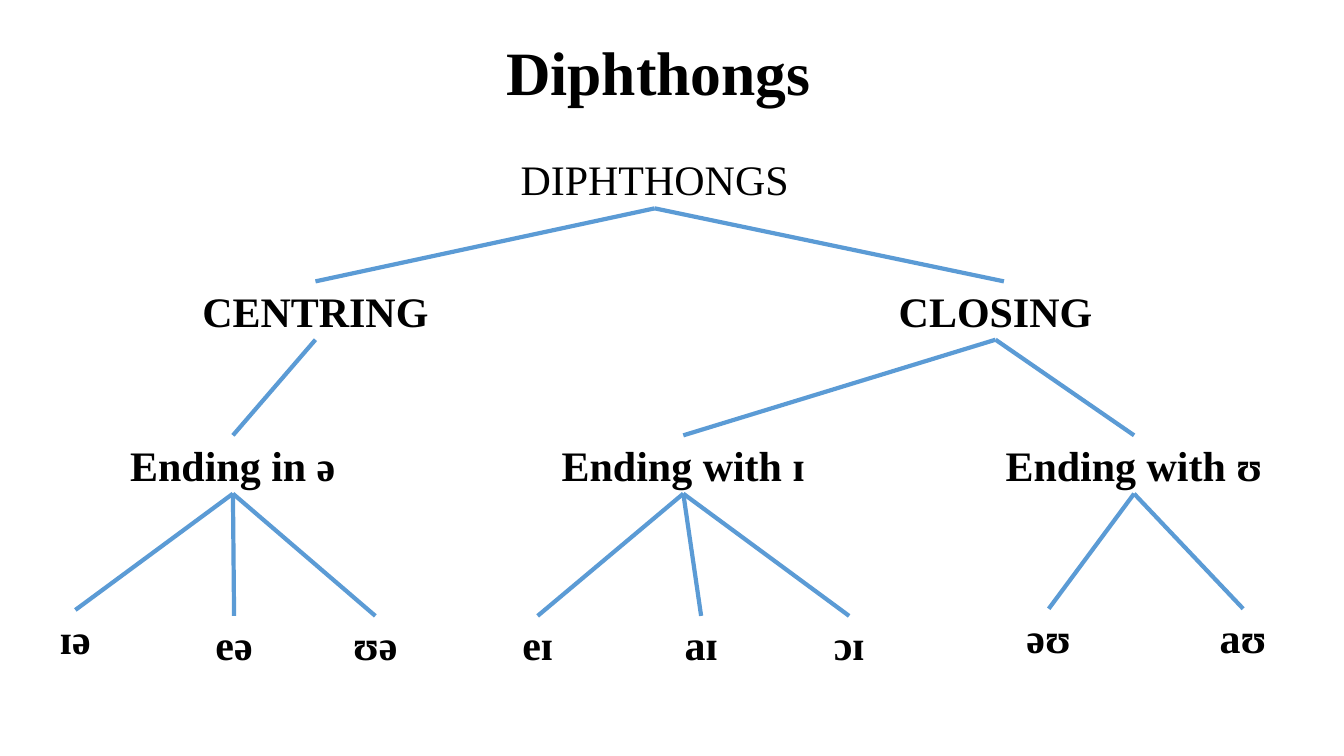
from lxml import etree
from pptx import Presentation
from pptx.dml.color import RGBColor
from pptx.enum.shapes import MSO_CONNECTOR
from pptx.enum.text import MSO_ANCHOR, PP_ALIGN
from pptx.oxml.ns import qn
from pptx.util import Cm, Pt

BLACK = RGBColor(0x00, 0x00, 0x00)
BLUE = RGBColor(0x5B, 0x9B, 0xD5)
STRAIGHT = MSO_CONNECTOR.STRAIGHT
MIDDLE = MSO_ANCHOR.MIDDLE
CENTER = PP_ALIGN.CENTER
TOP, BOTTOM = 0, 2

GROUP_TOP, ENDING_TOP = 7.09, 10.97
GROUP_SIZE = (7.77, 1.47)
SOUND_SIZE = (2.26, 1.4)

GROUPS = [
    ("CENTRING", 7.95, 7.95, [
        ("Ending in ə", 5.87, [
            ("ɪə", 1.9, 15.37), ("eə", 5.9, 15.52), ("ʊə", 9.46, 15.52)]),
    ]),
    ("CLOSING", 25.09, 25.3, [
        ("Ending with ɪ", 17.22, [
            ("eɪ", 13.55, 15.52), ("aɪ", 17.67, 15.52), ("ɔɪ", 21.4, 15.52)]),
        ("Ending with ʊ", 28.58, [
            ("əʊ", 26.43, 15.34), ("aʊ", 31.33, 15.34)]),
    ]),
]


class TreeSlide:
    font_name = "Times New Roman"
    line_width = Pt(3)

    def __init__(self, page):
        self.page = page

    def label(self, text, center, top, size, points=30, bold=True, spacing=1.0):
        width, height = size
        box = self.page.shapes.add_textbox(
            Cm(center - width / 2), Cm(top), Cm(width), Cm(height))
        frame = box.text_frame
        frame.word_wrap = True
        frame.vertical_anchor = MIDDLE
        para = frame.paragraphs[0]
        para.alignment = CENTER
        para.line_spacing = spacing
        span = para.add_run()
        span.text = text
        style = {"name": self.font_name, "size": Pt(points), "bold": bold}
        for name, value in style.items():
            setattr(span.font, name, value)
        span.font.color.rgb = BLACK
        return box

    def branch(self, parent, child, end_x=None):
        end = child.left + child.width // 2 if end_x is None else Cm(end_x)
        line = self.page.shapes.add_connector(
            STRAIGHT, parent.left + parent.width // 2,
            parent.top + parent.height, end, child.top)
        line.begin_connect(parent, BOTTOM)
        if end_x is None:
            line.end_connect(child, TOP)
        line.line.color.rgb = BLUE
        line.line.width = self.line_width
        etree.SubElement(line._element.spPr, qn("a:effectLst"))


def main():
    deck = Presentation()
    deck.slide_width, deck.slide_height = Cm(33.87), Cm(19.05)
    tree = TreeSlide(deck.slides.add_slide(deck.slide_layouts[6]))

    tree.label("Diphthongs ", 16.79, 0.56, (29.21, 2.67), points=44, spacing=0.9)
    root = tree.label("DIPHTHONGS", 16.5, 3.78, (9.37, 1.47), bold=False)

    for group_name, group_x, line_x, endings in GROUPS:
        group = tree.label(group_name, group_x, GROUP_TOP, GROUP_SIZE)
        tree.branch(root, group, None if line_x == group_x else line_x)
        for ending_name, ending_x, sounds in endings:
            ending = tree.label(ending_name, ending_x, ENDING_TOP, GROUP_SIZE)
            tree.branch(group, ending)
            for sound_name, sound_x, sound_top in sounds:
                sound = tree.label(sound_name, sound_x, sound_top, SOUND_SIZE)
                tree.branch(ending, sound)

    deck.save("out.pptx")


if __name__ == "__main__":
    main()
